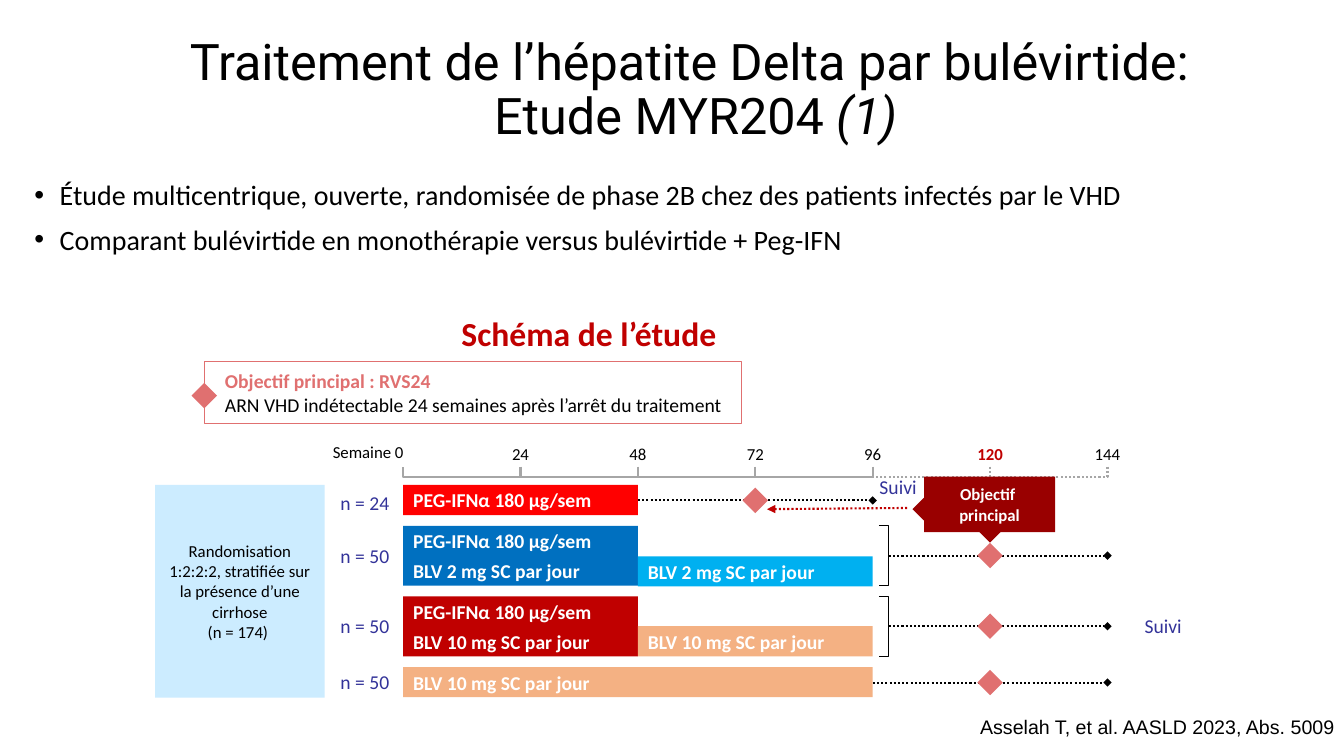
import copy
from dataclasses import dataclass
from typing import Any, Optional

import pptx
import pptx.dml.color
import pptx.enum.dml
import pptx.enum.shapes
import pptx.enum.text
import pptx.oxml
import pptx.util

Cm = pptx.util.Cm
Pt = pptx.util.Pt
RGBColor = pptx.dml.color.RGBColor
SHAPE = pptx.enum.shapes.MSO_SHAPE
ALIGN = pptx.enum.text.PP_ALIGN
ANCHOR = pptx.enum.text.MSO_ANCHOR
DOTTED = pptx.enum.dml.MSO_LINE.ROUND_DOT
NS = 'xmlns:a="http://schemas.openxmlformats.org/drawingml/2006/main"'

BLACK = RGBColor(0x00, 0x00, 0x00)
WHITE = RGBColor(0xFF, 0xFF, 0xFF)
RED = RGBColor(0xFF, 0x00, 0x00)
CRIMSON = RGBColor(0xC0, 0x00, 0x00)
MAROON = RGBColor(0x99, 0x00, 0x00)
ROSE = RGBColor(0xE0, 0x70, 0x70)
BLUE = RGBColor(0x00, 0x70, 0xC0)
SKY = RGBColor(0x00, 0xB0, 0xF0)
PALE_BLUE = RGBColor(0xCC, 0xEC, 0xFF)
PEACH = RGBColor(0xF4, 0xB1, 0x83)
INDIGO = RGBColor(0x33, 0x33, 0x99)
GREY = RGBColor(0xA6, 0xA6, 0xA6)

WEEK_0, WEEK_144 = 10.16, 27.91
AXIS_Y, TICK = 12.01, 0.25
BAR_H = 0.76
BRACKET_X, BRACKET_W = 22.15, 0.25
ZERO_INSETS = (0, 0, 0, 0)

PEG = "PEG-IFNα 180 μg/sem"
BLV_2 = "BLV 2 mg SC par jour"
BLV_10 = "BLV 10 mg SC par jour"


@dataclass
class Bar:
    text: str
    start: int
    end: int
    y: float
    color: RGBColor


@dataclass
class Arm:
    count: str
    label_y: float
    line_x: float
    end_week: int
    goal_week: int
    y: float
    bracketed: bool = False


@dataclass
class Label:
    text: str
    box: tuple
    fmt: dict
    align: Any = ALIGN.LEFT
    anchor: Any = ANCHOR.TOP
    wrap: bool = False
    insets: Optional[tuple] = None
    spacing: float = 1.0


def week_x(week: int) -> float:
    return WEEK_0 + (WEEK_144 - WEEK_0) * week / 144


def font(size: float, color: RGBColor, **extra) -> dict:
    return {"name": "Calibri", "size": Pt(size), "color": color, "bold": False, **extra}


def add_runs(p, text: str, fmt: dict) -> None:
    for i, line in enumerate(text.split("\n")):
        if i:
            p.add_line_break()
            p._p[-1].append(copy.deepcopy(r._r.rPr))
        if not line:
            continue
        r = p.add_run()
        r.text = line
        for key, value in fmt.items():
            if key == "color":
                r.font.color.rgb = value
            else:
                setattr(r.font, key, value)


def write(tf, paragraphs: list, align=ALIGN.LEFT, **p_format) -> None:
    for i, runs in enumerate(paragraphs):
        p = tf.add_paragraph() if i else tf.paragraphs[0]
        for key, value in {"alignment": align, **p_format}.items():
            setattr(p, key, value)
        for text, fmt in runs:
            add_runs(p, text, fmt)


def set_frame(tf, anchor, insets: Optional[tuple] = None, wrap: bool = True) -> None:
    tf.word_wrap, tf.vertical_anchor = wrap, anchor
    if insets:
        for side, value in zip(("left", "top", "right", "bottom"), insets):
            setattr(tf, f"margin_{side}", Cm(value))


def add_label(shapes, label: Label) -> None:
    sp = shapes.add_textbox(*map(Cm, label.box))
    set_frame(sp.text_frame, label.anchor, label.insets, label.wrap)
    write(sp.text_frame, [[(label.text, label.fmt)]], label.align, line_spacing=label.spacing)


def add_shape(shapes, kind, box: tuple, fill=None, line=None):
    sp = shapes.add_shape(kind, *map(Cm, box))
    style(sp, fill, line, 0.75)
    return sp


def style(sp, fill, line, width: float) -> None:
    sp.shadow.inherit = False
    if fill is None:
        sp.fill.background()
    else:
        sp.fill.solid()
        sp.fill.fore_color.rgb = fill
    if line is None:
        sp.line.fill.background()
    else:
        sp.line.color.rgb = line
        sp.line.width = Pt(width)


def add_diamond(shapes, x: float, y: float, size: float, color: RGBColor) -> None:
    add_shape(shapes, SHAPE.FLOWCHART_DECISION, (x - size / 2, y - size / 2, size, size), color)


def add_dotted(shapes, start: tuple, end: tuple, color: RGBColor, tail: str) -> None:
    cx = shapes.add_connector(pptx.enum.shapes.MSO_CONNECTOR.STRAIGHT, *map(Cm, start + end))
    for key, value in {"width": Pt(1.5), "dash_style": DOTTED}.items():
        setattr(cx.line, key, value)
    cx.line.color.rgb = color
    cx.line._ln.append(pptx.oxml.parse_xml(f'<a:tailEnd {NS} type="{tail}"/>'))
    cx._element.spPr.append(pptx.oxml.parse_xml(f"<a:effectLst {NS}/>"))


def add_axis(shapes, start: int, end: int, dotted: bool) -> None:
    left, right, top = week_x(start), week_x(end), AXIS_Y - TICK
    points = [(right, AXIS_Y), (left, AXIS_Y)] + ([] if dotted else [(left, top)])
    fb = shapes.build_freeform(Cm(right), Cm(top))
    fb.add_line_segments([(Cm(x), Cm(y)) for x, y in points], close=False)
    sp = fb.convert_to_shape()
    style(sp, None, GREY, 1.5)
    if dotted:
        sp.line.dash_style = DOTTED


def add_bar(shapes, bar: Bar) -> None:
    left = week_x(bar.start)
    sp = add_shape(shapes, SHAPE.RECTANGLE, (left, bar.y, week_x(bar.end) - left, BAR_H), bar.color)
    set_frame(sp.text_frame, ANCHOR.MIDDLE)
    write(sp.text_frame, [[(bar.text, font(14, WHITE, bold=True))]])


def add_arm(shapes, arm: Arm) -> None:
    add_label(shapes, Label(arm.count, (8.33, arm.label_y, 1.75, 0.86), font(14, INDIGO)))
    add_dotted(shapes, (arm.line_x, arm.y), (week_x(arm.end_week), arm.y), BLACK, "diamond")
    add_diamond(shapes, week_x(arm.goal_week), arm.y, 0.64, ROSE)
    if arm.bracketed:
        box = (BRACKET_X, arm.y - BAR_H, BRACKET_W, 2 * BAR_H)
        add_shape(shapes, SHAPE.RIGHT_BRACKET, box, line=BLACK).adjustments[0] = 0


def add_placeholders(slide) -> None:
    title, body = slide.shapes.title, slide.placeholders[1]
    for sp, box in ((title, (0.61, 0.46, 33.86, 3.68)), (body, (0.61, 4.45, 32.77, 12.09))):
        sp.left, sp.top, sp.width, sp.height = map(Cm, box)
    set_frame(title.text_frame, ANCHOR.MIDDLE)
    fmt = font(36, BLACK, name="Roboto")
    write(title.text_frame, [[("Traitement de l’hépatite Delta par bulévirtide: \nEtude MYR204 ", fmt),
                              ("(1)", {**fmt, "italic": True})]], ALIGN.CENTER, line_spacing=0.9)
    set_frame(body.text_frame, ANCHOR.TOP)
    bullets = ["Étude multicentrique, ouverte, randomisée de phase 2B chez des patients infectés par le VHD",
               "Comparant bulévirtide en monothérapie versus bulévirtide + Peg-IFN"]
    write(body.text_frame, [[(text, font(20, BLACK))] for text in bullets],
          line_spacing=0.9, space_before=Pt(10))
    for p in body.text_frame.paragraphs:
        pPr = p._p.get_or_add_pPr()
        pPr.set("marL", str(Cm(0.64)))
        pPr.set("indent", str(-Cm(0.64)))
        pPr.append(pptx.oxml.parse_xml(f'<a:buFont {NS} typeface="Arial"/>'))
        pPr.append(pptx.oxml.parse_xml(f'<a:buChar {NS} char="•"/>'))


def add_panel(shapes, box: tuple, fill, line, paragraphs: list, align, insets=None) -> None:
    sp = add_shape(shapes, SHAPE.RECTANGLE, box, fill, line)
    set_frame(sp.text_frame, ANCHOR.MIDDLE, insets)
    write(sp.text_frame, paragraphs, align)


def main() -> None:
    prs = pptx.Presentation()
    prs.slide_width, prs.slide_height = Cm(33.87), Cm(19.05)
    slide = prs.slides.add_slide(prs.slide_layouts[1])
    shapes = slide.shapes
    add_placeholders(slide)

    labels = [
        Label("Asselah T, et al. AASLD 2023, Abs. 5009", (24.36, 17.88, 9.53, 0.86),
              font(14, BLACK, name="Arial"), ALIGN.RIGHT, ANCHOR.BOTTOM),
        Label("Schéma de l’étude", (11.38, 7.77, 7.01, 1.27), font(24, CRIMSON, bold=True)),
        Label("Semaine 0", (8.38, 11.18, 1.8, 0.46), font(12, BLACK), ALIGN.CENTER,
              insets=ZERO_INSETS, spacing=0.9),
    ]
    for week in range(24, 145, 24):
        fmt = font(12, CRIMSON, bold=True) if week == 120 else font(12, BLACK)
        labels.append(Label(str(week), (week_x(week) - 0.33, 11.23, 0.66, 0.46), fmt,
                            ALIGN.CENTER, insets=ZERO_INSETS, spacing=0.9))
    for x, y in ((21.23, 11.91), (27.91, 15.42)):
        labels.append(Label("Suivi ", (x, y, 2.92, 0.71), font(14, INDIGO), ALIGN.CENTER,
                            ANCHOR.MIDDLE, wrap=True))
    for label in labels:
        add_label(shapes, label)

    for start in range(0, 144, 24):
        add_axis(shapes, start, start + 24, start >= 96)

    bracket_end = BRACKET_X + BRACKET_W
    for arm in (Arm("n = 24", 12.24, week_x(48), 96, 72, 12.61),
                Arm("n = 50", 13.59, bracket_end, 144, 120, 14.0, True),
                Arm("n = 50", 15.34, bracket_end, 144, 120, 15.78, True),
                Arm("n = 50", 16.76, week_x(96), 144, 120, 17.2)):
        add_arm(shapes, arm)

    for bar in (Bar(PEG, 0, 48, 12.22, RED),
                Bar(PEG, 0, 48, 13.25, BLUE), Bar(BLV_2, 0, 48, 14.0, BLUE),
                Bar(PEG, 0, 48, 15.03, CRIMSON), Bar(BLV_10, 0, 48, 15.78, CRIMSON),
                Bar(BLV_10, 0, 96, 16.81, PEACH),
                Bar(BLV_10, 48, 96, 15.78, PEACH), Bar(BLV_2, 48, 96, 14.02, SKY)):
        add_bar(shapes, bar)

    add_panel(shapes, (5.16, 9.12, 13.54, 1.55), None, ROSE,
              [[("Objectif principal : RVS24\n", font(14, ROSE, bold=True)),
                ("ARN VHD indétectable 24 semaines après l’arrêt du traitement", font(14, BLACK))]],
              ALIGN.LEFT, (0.51, 0.13, 0, 0.13))
    add_diamond(shapes, 5.15, 9.97, 0.64, ROSE)

    add_panel(shapes, (3.91, 12.22, 4.27, 5.36), PALE_BLUE, None,
              [[(text, font(12, BLACK))] for text in
               ("Randomisation 1:2:2:2, stratifiée sur la présence d’une cirrhose", "(n = 174) ")],
              ALIGN.CENTER)

    add_panel(shapes, (23.29, 12.01, 3.3, 1.4), MAROON, None,
              [[(text, font(12, WHITE, bold=True))] for text in ("Objectif ", "principal")],
              ALIGN.CENTER, ZERO_INSETS)
    for x, y in ((week_x(120), 13.39), (23.28, 12.83)):
        add_diamond(shapes, x, y, 0.57, MAROON)
    add_dotted(shapes, (22.86, 12.8), (19.33, 12.83), CRIMSON, "triangle")

    prs.save("out.pptx")


if __name__ == "__main__":
    main()
